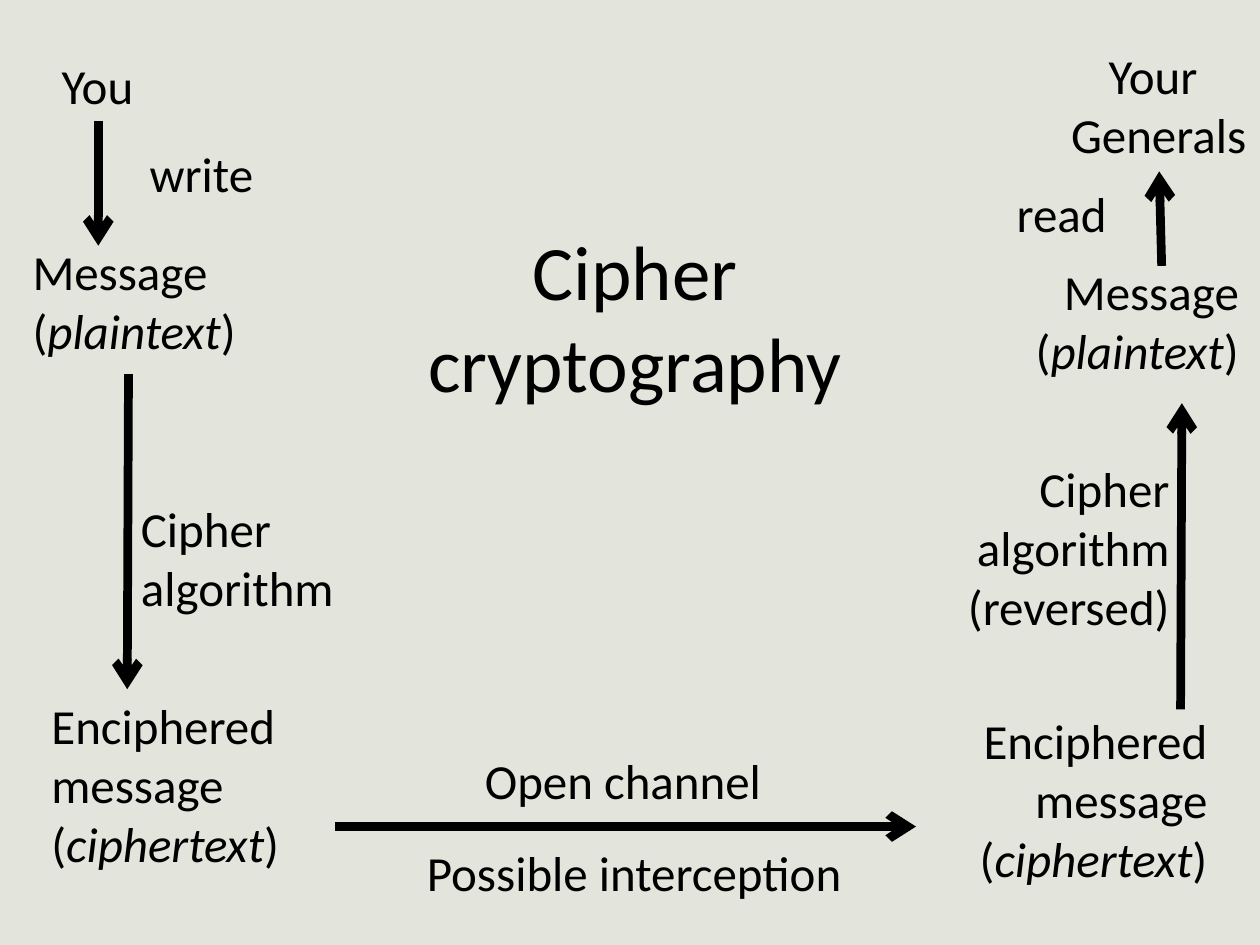
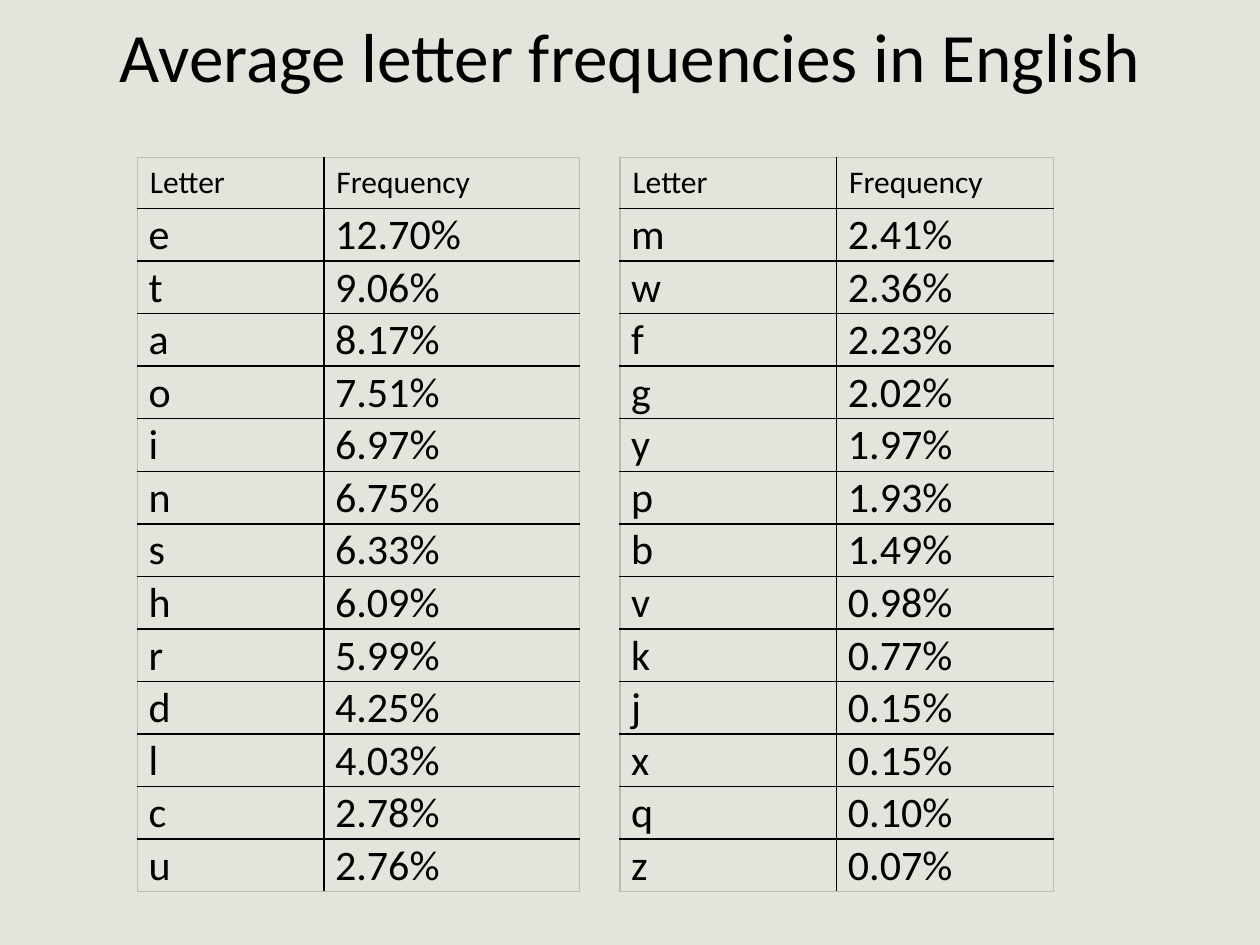
"""Build two slides on cipher cryptography and English letter frequencies."""
from typing import NamedTuple

from lxml import etree
from pptx import Presentation
from pptx.dml.color import RGBColor
from pptx.enum.shapes import MSO_CONNECTOR
from pptx.enum.text import MSO_ANCHOR, MSO_AUTO_SIZE, PP_ALIGN
from pptx.oxml.ns import qn
from pptx.presentation import Presentation as Deck
from pptx.slide import Slide
from pptx.table import _Cell
from pptx.text.text import _Paragraph
from pptx.util import Inches, Pt

LEFT, CENTER, RIGHT = PP_ALIGN.LEFT, PP_ALIGN.CENTER, PP_ALIGN.RIGHT
MIDDLE = MSO_ANCHOR.MIDDLE
NO_AUTOFIT = MSO_AUTO_SIZE.NONE
STRAIGHT = MSO_CONNECTOR.STRAIGHT

FONT = "Calibri"
BACKGROUND = "E3E4DC"
INK = "000000"
FRAME = "B9BCB7"
TITLE_ONLY = 5
ITALIC_MARK = "*"


class Box(NamedTuple):
    """Position and size in inches."""

    left: float
    top: float
    width: float
    height: float


class Label(NamedTuple):
    """A diagram label, with italic words between marks."""

    lines: tuple[str, ...]
    box: Box
    align: PP_ALIGN = LEFT
    wrap: bool = True


class Arrow(NamedTuple):
    """An arrow from one point to another, in inches."""

    x1: float
    y1: float
    x2: float
    y2: float


class FrequencyTable(NamedTuple):
    """Letters with their frequencies, and where they stand."""

    left: float
    widths: tuple[float, float]
    rows: tuple[tuple[str, str], ...]


PLAINTEXT = ("Message (*plaintext*)",)
CIPHERTEXT = ("Enciphered message (*ciphertext*)",)

LABELS = (
    Label(("You",), Box(0.39, 0.39, 0.78, 0.57), wrap=False),
    Label(("write",), Box(1.09, 1.09, 1.03, 0.57), wrap=False),
    Label(PLAINTEXT, Box(0.16, 1.87, 3.05, 1.04)),
    Label(("Cipher algorithm",), Box(1.02, 3.91, 1.88, 1.04)),
    Label(CIPHERTEXT, Box(0.31, 5.47, 2.97, 1.51)),
    Label(("Open channel",), Box(3.75, 5.91, 2.42, 0.57), wrap=False),
    Label(("Possible interception",), Box(3.29, 6.64, 3.53, 0.57), wrap=False),
    Label(CIPHERTEXT, Box(7.34, 5.59, 2.34, 1.51), RIGHT),
    Label(("Cipher algorithm (reversed)",), Box(7.5, 3.59, 1.88, 1.51), RIGHT),
    Label(PLAINTEXT, Box(6.88, 2.03, 3.05, 1.04), RIGHT),
    Label(("read",), Box(7.97, 1.41, 0.92, 0.57), wrap=False),
    Label(("Your ", "Generals"), Box(8.39, 0.31, 1.61, 1.04), CENTER, False),
)

ARROWS = (
    Arrow(0.78, 0.96, 0.78, 1.95),
    Arrow(1.02, 2.97, 1.01, 5.47),
    Arrow(2.66, 6.56, 7.27, 6.56),
    Arrow(9.37, 5.63, 9.38, 3.2),
    Arrow(9.22, 2.11, 9.2, 1.36),
)

HEADINGS = ("Letter", "Frequency")
TABLE_TOP = 1.25
ROW_HEIGHT = 0.4
FREQUENCY_TABLES = (
    FrequencyTable(1.09, (1.48, 2.03), (
        ("e", "12.70%"), ("t", "9.06%"), ("a", "8.17%"), ("o", "7.51%"),
        ("i", "6.97%"), ("n", "6.75%"), ("s", "6.33%"), ("h", "6.09%"),
        ("r", "5.99%"), ("d", "4.25%"), ("l", "4.03%"), ("c", "2.78%"),
        ("u", "2.76%"),
    )),
    FrequencyTable(4.92, (1.72, 1.72), (
        ("m", "2.41%"), ("w", "2.36%"), ("f", "2.23%"), ("g", "2.02%"),
        ("y", "1.97%"), ("p", "1.93%"), ("b", "1.49%"), ("v", "0.98%"),
        ("k", "0.77%"), ("j", "0.15%"), ("x", "0.15%"), ("q", "0.10%"),
        ("z", "0.07%"),
    )),
)


def color(value: str) -> RGBColor:
    """Turn a hex string into a colour."""
    return RGBColor.from_string(value)


def write(paragraph: _Paragraph, text: str, size: float, align: PP_ALIGN = LEFT) -> None:
    """Add text run by run, with marked words in italics."""
    paragraph.alignment = align
    for index, part in enumerate(text.split(ITALIC_MARK)):
        run = paragraph.add_run()
        run.text = part
        run.font.name = FONT
        run.font.size = Pt(size)
        run.font.color.rgb = color(INK)
        if index % 2:
            run.font.italic = True


def add_titled_slide(deck: Deck, title: str, box: Box, size: float) -> Slide:
    """Add a slide with its title placed and formatted."""
    slide = deck.slides.add_slide(deck.slide_layouts[TITLE_ONLY])
    heading = slide.shapes.title
    heading.left, heading.top, heading.width, heading.height = map(Inches, box)
    frame = heading.text_frame
    frame.auto_size = NO_AUTOFIT
    frame.vertical_anchor = MIDDLE
    write(frame.paragraphs[0], title, size, CENTER)
    return slide


def add_label(slide: Slide, label: Label) -> None:
    """Add one diagram label."""
    frame = slide.shapes.add_textbox(*map(Inches, label.box)).text_frame
    frame.word_wrap = label.wrap
    for index, line in enumerate(label.lines):
        paragraph = frame.add_paragraph() if index else frame.paragraphs[0]
        write(paragraph, line, 28, label.align)


def add_arrow(slide: Slide, arrow: Arrow) -> None:
    """Add one thick arrow with an open head."""
    connector = slide.shapes.add_connector(STRAIGHT, *map(Inches, arrow))
    connector.line.color.rgb = color(INK)
    connector.line.width = Pt(5)
    etree.SubElement(connector.line._ln, qn("a:tailEnd"), type="arrow")
    etree.SubElement(connector._element.spPr, qn("a:effectLst"))


def add_border(cell: _Cell, side: str, hex_color: str) -> None:
    """Draw one side of a cell's border."""
    properties = cell._tc.get_or_add_tcPr()
    line = etree.SubElement(properties, qn(f"a:ln{side}"), w=str(Pt(1)))
    fill = etree.SubElement(line, qn("a:solidFill"))
    etree.SubElement(fill, qn("a:srgbClr"), val=hex_color)


def add_frequency_table(slide: Slide, data: FrequencyTable) -> None:
    """Add a table with black inner rules and a pale outer frame."""
    rows = (HEADINGS, *data.rows)
    last_row, last_column = len(rows) - 1, len(HEADINGS) - 1
    box = Box(data.left, TABLE_TOP, sum(data.widths), ROW_HEIGHT * len(rows))
    table = slide.shapes.add_table(len(rows), len(HEADINGS), *map(Inches, box)).table
    table.first_row = table.horz_banding = False
    for column, width in zip(table.columns, data.widths):
        column.width = Inches(width)
    for r, row in enumerate(rows):
        table.rows[r].height = Inches(ROW_HEIGHT)
        for c, text in enumerate(row):
            cell = table.cell(r, c)
            outer_sides = {"L": c == 0, "R": c == last_column, "T": r == 0, "B": r == last_row}
            for side, is_outer in outer_sides.items():
                add_border(cell, side, FRAME if is_outer else INK)
            cell.fill.background()
            cell.vertical_anchor = MIDDLE
            if r:
                cell.margin_left = Inches(0.09)
                cell.margin_top = cell.margin_right = Inches(0.01)
                cell.margin_bottom = Inches(0)
            write(cell.text_frame.paragraphs[0], text, 24 if r else 18)


def build_cipher_slide(deck: Deck) -> None:
    """Show a message's way from you to your generals."""
    slide = add_titled_slide(deck, "Cipher cryptography", Box(2.89, 1.56, 4.3, 1.89), 44)
    for label in LABELS:
        add_label(slide, label)
    for arrow in ARROWS:
        add_arrow(slide, arrow)


def build_frequency_slide(deck: Deck) -> None:
    """Show the letter frequencies in two tables."""
    title = "Average letter frequencies in English"
    slide = add_titled_slide(deck, title, Box(0.5, 0, 9, 0.87), 39.6)
    for data in FREQUENCY_TABLES:
        add_frequency_table(slide, data)


def main() -> None:
    """Build and save the presentation."""
    deck = Presentation()
    deck.slide_width, deck.slide_height = Inches(10), Inches(7.5)
    backdrop = deck.slide_master.background.fill
    backdrop.solid()
    backdrop.fore_color.rgb = color(BACKGROUND)
    build_cipher_slide(deck)
    build_frequency_slide(deck)
    deck.save("out.pptx")


if __name__ == "__main__":
    main()
